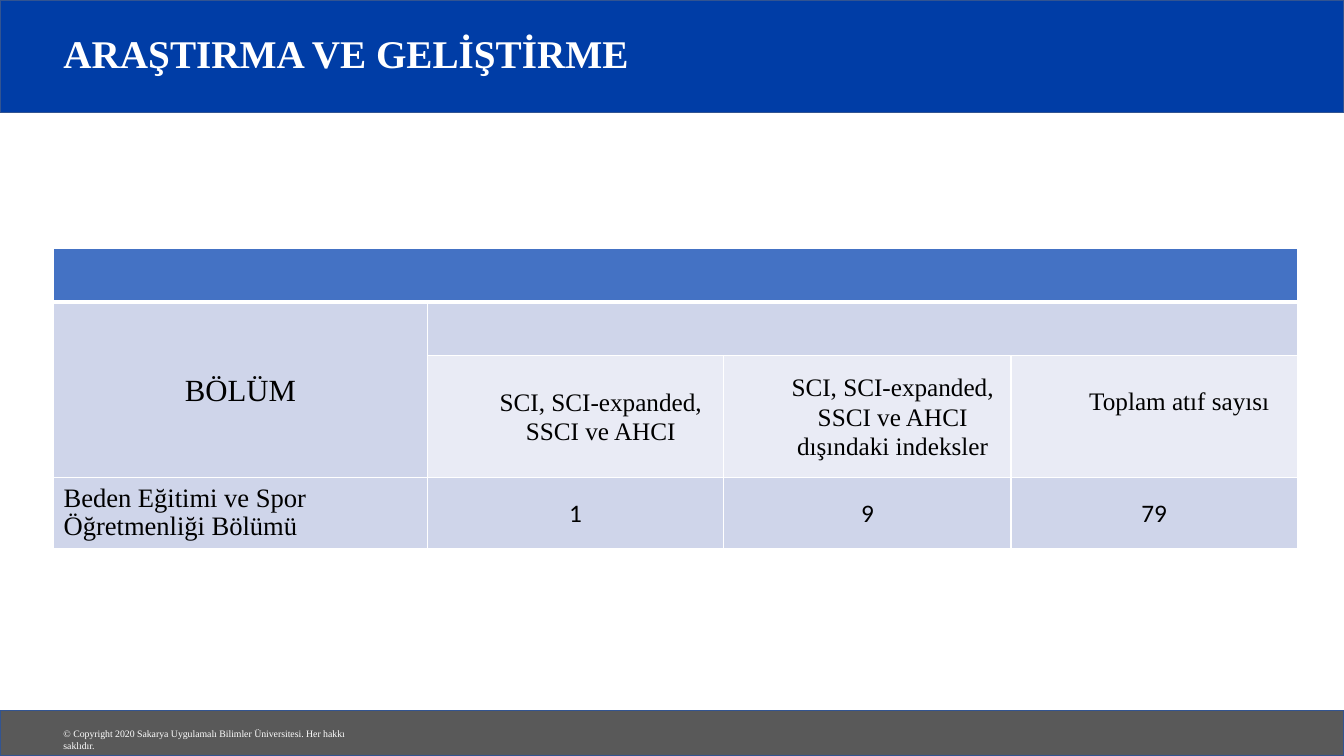
from lxml import etree
from pptx import Presentation
from pptx.dml.color import RGBColor
from pptx.enum.shapes import MSO_SHAPE
from pptx.enum.text import MSO_ANCHOR, PP_ALIGN
from pptx.oxml.ns import qn
from pptx.util import Cm, Pt

RECTANGLE = MSO_SHAPE.RECTANGLE
TOP, MIDDLE = MSO_ANCHOR.TOP, MSO_ANCHOR.MIDDLE
LEFT, CENTER = PP_ALIGN.LEFT, PP_ALIGN.CENTER

# Content
TITLE = "ARAŞTIRMA VE GELİŞTİRME"
FOOTER = "© Copyright 2020 Sakarya Uygulamalı Bilimler Üniversitesi. Her hakkı saklıdır."
ROWS = [
    ["", "", "", ""],
    ["BÖLÜM", "", "", ""],
    ["", "SCI, SCI-expanded, SSCI ve AHCI",
     "SCI, SCI-expanded, SSCI ve AHCI dışındaki indeksler", "Toplam atıf sayısı"],
    ["Beden Eğitimi ve Spor Öğretmenliği Bölümü", "1", "9", "79"],
]
MERGES = [((0, 0), (0, 3)), ((1, 0), (2, 0)), ((1, 1), (1, 3))]

# Theme
THEME = {
    "banner": "003DA6", "footer": "595959", "outline": "325491",
    "head": "4472C4", "band": "CFD5EA", "light": "E9EBF5",
    "white": "FFFFFF", "black": "000000",
    "serif": "Times New Roman", "sans": "Calibri",
    "title_size": 28, "footer_size": 7, "department_size": 22,
    "name_size": 19, "cell_size": 18,
}

# Layout in centimetres
SLIDE_W, SLIDE_H = 33.87, 19.05
BANNER_H, FOOTER_TOP = 2.84, 17.9
MARGIN = 1.35
TABLE_TOP = 6.26
COLUMN_WIDTHS = [9.42, 7.47, 7.24, 7.21]
ROW_HEIGHTS = [1.35, 1.35, 3.07, 1.73]
INDENT = 1.27

# Text formats of the table cells
HEADING = {"size": "cell_size", "indent": INDENT, "line_spacing": 1.07}
VALUE = {"size": "cell_size", "font": "sans", "line_spacing": 1.07}
DEPARTMENT = {"size": "department_size", "line_spacing": 1.07}
NAME = {"size": "name_size", "alignment": LEFT, "line_spacing": 0.95}


def color(key):
    return RGBColor.from_string(THEME[key])


def write(frame, text, size, font="serif", ink="black", bold=False, indent=0,
          alignment=LEFT, line_spacing=1.0):
    paragraph = frame.paragraphs[0]
    paragraph.text = text
    if indent:
        paragraph._p.get_or_add_pPr().set("marL", str(Cm(indent)))
    paragraph.alignment = alignment
    paragraph.line_spacing = line_spacing
    run_font = paragraph.runs[0].font
    formats = {"name": THEME[font], "size": Pt(THEME[size]), "bold": bold}
    for attribute, value in formats.items():
        setattr(run_font, attribute, value)
    run_font.color.rgb = color(ink)


def add_bar(slide, top, height, fill):
    bar = slide.shapes.add_shape(RECTANGLE, 0, Cm(top), Cm(SLIDE_W), Cm(height))
    bar.shadow.inherit = False
    bar.fill.solid()
    bar.fill.fore_color.rgb = color(fill)
    bar.line.color.rgb = color("outline")
    bar.line.width = Pt(1)


def add_label(slide, box, anchor, text, **formats):
    frame = slide.shapes.add_textbox(*map(Cm, box)).text_frame
    frame.word_wrap = True
    frame.vertical_anchor = anchor
    write(frame, text, ink="white", **formats)


def set_borders(cell, widths):
    properties = cell._tc.get_or_add_tcPr()
    for side, width in widths.items():
        line = etree.SubElement(properties, qn(f"a:ln{side}"), w=str(Pt(width)))
        fill = etree.SubElement(line, qn("a:solidFill"))
        etree.SubElement(fill, qn("a:srgbClr"), val=THEME["white"])


def cell_style(row, column):
    """Return the fill and the text format of a cell."""
    if row == 0:
        return "head", VALUE
    if column == 0:
        return "band", NAME if row == 3 else DEPARTMENT
    return ("light", HEADING) if row == 2 else ("band", VALUE)


def add_index_table(slide):
    table = slide.shapes.add_table(
        len(ROWS), len(COLUMN_WIDTHS), Cm(MARGIN), Cm(TABLE_TOP),
        Cm(sum(COLUMN_WIDTHS)), Cm(sum(ROW_HEIGHTS))).table
    table.first_row = table.horz_banding = False
    for column, width in zip(table.columns, COLUMN_WIDTHS):
        column.width = Cm(width)
    for row, height in zip(table.rows, ROW_HEIGHTS):
        row.height = Cm(height)

    for r, texts in enumerate(ROWS):
        for c, text in enumerate(texts):
            cell = table.cell(r, c)
            fill, formats = cell_style(r, c)
            set_borders(cell, {"L": 1, "R": 1, "T": 3 if r == 1 else 1,
                               "B": 3 if r == 0 else 1})
            cell.fill.solid()
            cell.fill.fore_color.rgb = color(fill)
            cell.vertical_anchor = MIDDLE
            if r >= 2 and c >= 2:
                cell.margin_left = cell.margin_right = 0
                cell.margin_top = cell.margin_bottom = 0
            if text:
                write(cell.text_frame, text, **{"alignment": CENTER, **formats})

    # The last heading sits one half line above the middle
    table.cell(2, 3).margin_bottom = Cm(0.76)
    for first, last in MERGES:
        table.cell(*first).merge(table.cell(*last))


def main():
    presentation = Presentation()
    presentation.slide_width, presentation.slide_height = Cm(SLIDE_W), Cm(SLIDE_H)
    slide = presentation.slides.add_slide(presentation.slide_layouts[6])

    # Banner and footer
    add_bar(slide, 0, BANNER_H, "banner")
    add_bar(slide, FOOTER_TOP, SLIDE_H - FOOTER_TOP, "footer")
    add_label(slide, (MARGIN, 18.21, 8.36, 0.56), TOP, FOOTER, size="footer_size")
    add_label(slide, (MARGIN, 0.48, 28.02, 1.85), MIDDLE, TITLE,
              size="title_size", bold=True, line_spacing=0.9)

    # Table of indexed publications
    add_index_table(slide)
    presentation.save("out.pptx")


if __name__ == "__main__":
    main()
